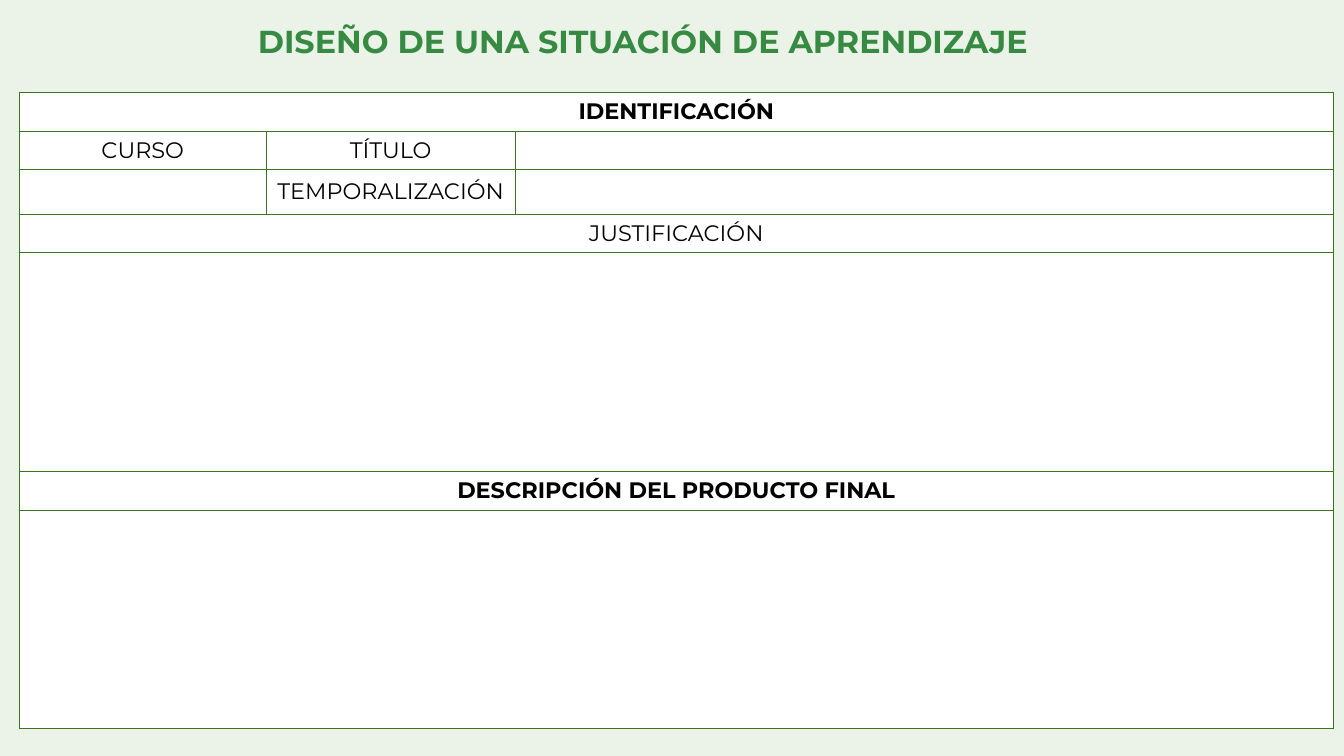
from dataclasses import dataclass

from lxml import etree
from pptx import Presentation
from pptx import util as u
from pptx.dml import color
from pptx.enum import text
from pptx.oxml import ns


@dataclass(frozen=True)
class Theme:
    face: str = "Montserrat"
    back: str = "EBF3E8"
    head: str = "368A41"
    ink: str = "000000"
    cell: str = "FFFFFF"
    rule: str = "38761D"
    big: int = 17
    body: int = 12
    line: float = 0.5


def adjust(target, values):
    for name, value in values.items():
        setattr(target, name, value)


class Page:
    def __init__(self, deck, theme):
        self.theme = theme
        self.slide = deck.slides.add_slide(deck.slide_layouts[6])
        self.paint(self.slide.background.fill, theme.back)

    def paint(self, fill, tone):
        fill.solid()
        fill.fore_color.rgb = color.RGBColor.from_string(tone)

    def label(self, frame, words, size, tone, bold):
        para = frame.paragraphs[0]
        para.alignment = text.PP_ALIGN.CENTER
        run = para.add_run()
        run.text = words
        adjust(run.font, {"name": self.theme.face, "size": u.Pt(size), "bold": bold})
        run.font.color.rgb = color.RGBColor.from_string(tone)

    def title(self, words, box):
        frame = self.slide.shapes.add_textbox(*map(u.Pt, box)).text_frame
        pad = u.Pt(7.2)
        adjust(frame, {
            "word_wrap": True,
            "margin_left": pad, "margin_right": pad,
            "margin_top": pad, "margin_bottom": pad,
        })
        self.label(frame, words, self.theme.big, self.theme.head, True)

    def border(self, cell):
        props = cell._tc.get_or_add_tcPr()
        for side in ("lnL", "lnR", "lnT", "lnB"):
            line = etree.SubElement(props, ns.qn("a:" + side), w=str(u.Pt(self.theme.line)))
            fill = etree.SubElement(line, ns.qn("a:solidFill"))
            etree.SubElement(fill, ns.qn("a:srgbClr"), val=self.theme.rule)

    def style(self, cell):
        self.border(cell)
        self.paint(cell.fill, self.theme.cell)
        adjust(cell, {
            "vertical_anchor": text.MSO_ANCHOR.MIDDLE,
            "margin_left": u.Pt(5), "margin_right": u.Pt(5),
            "margin_top": 0, "margin_bottom": 0,
        })
        para = cell.text_frame.paragraphs[0]
        etree.SubElement(para._p, ns.qn("a:endParaRPr"), sz=str(self.theme.body * 100))

    def table(self, left, top, cols, rows, spans, labels):
        box = map(u.Pt, (left, top, sum(cols), sum(rows)))
        grid = self.slide.shapes.add_table(len(rows), len(cols), *box).table
        adjust(grid, {"first_row": False, "horz_banding": False})
        for col, width in zip(grid.columns, cols):
            col.width = u.Pt(width)
        for row, height in zip(grid.rows, rows):
            row.height = u.Pt(height)
        for cell in grid.iter_cells():
            self.style(cell)
        for row, parts in enumerate(spans):
            for first, last in parts:
                if last > first:
                    grid.cell(row, first).merge(grid.cell(row, last))
        for (row, col), (words, bold) in labels.items():
            frame = grid.cell(row, col).text_frame
            self.label(frame, words, self.theme.body, self.theme.ink, bold)


def main():
    deck = Presentation()
    adjust(deck, {"slide_width": u.Pt(720), "slide_height": u.Pt(405)})
    page = Page(deck, Theme())

    band, tall = 20.6, 117.3
    full = [(0, 6)]
    split = [(0, 1), (2, 2), (3, 6)]
    page.table(
        10.3, 49.6,
        cols=[102.2, 30.2, 133.3, 137.6, 100.3, 100.3, 100.3],
        rows=[band, band, 24, band, tall, band, tall],
        spans=[full, split, split, full, full, full, full],
        labels={
            (0, 0): ("IDENTIFICACIÓN", True),
            (1, 0): ("CURSO", False),
            (1, 2): ("TÍTULO", False),
            (2, 2): ("TEMPORALIZACIÓN", False),
            (3, 0): ("JUSTIFICACIÓN", False),
            (5, 0): ("DESCRIPCIÓN DEL PRODUCTO FINAL", True),
        },
    )
    page.title("DISEÑO DE UNA SITUACIÓN DE APRENDIZAJE", (82.8, 4.5, 523.4, 35.3))
    deck.save("out.pptx")


if __name__ == "__main__":
    main()
